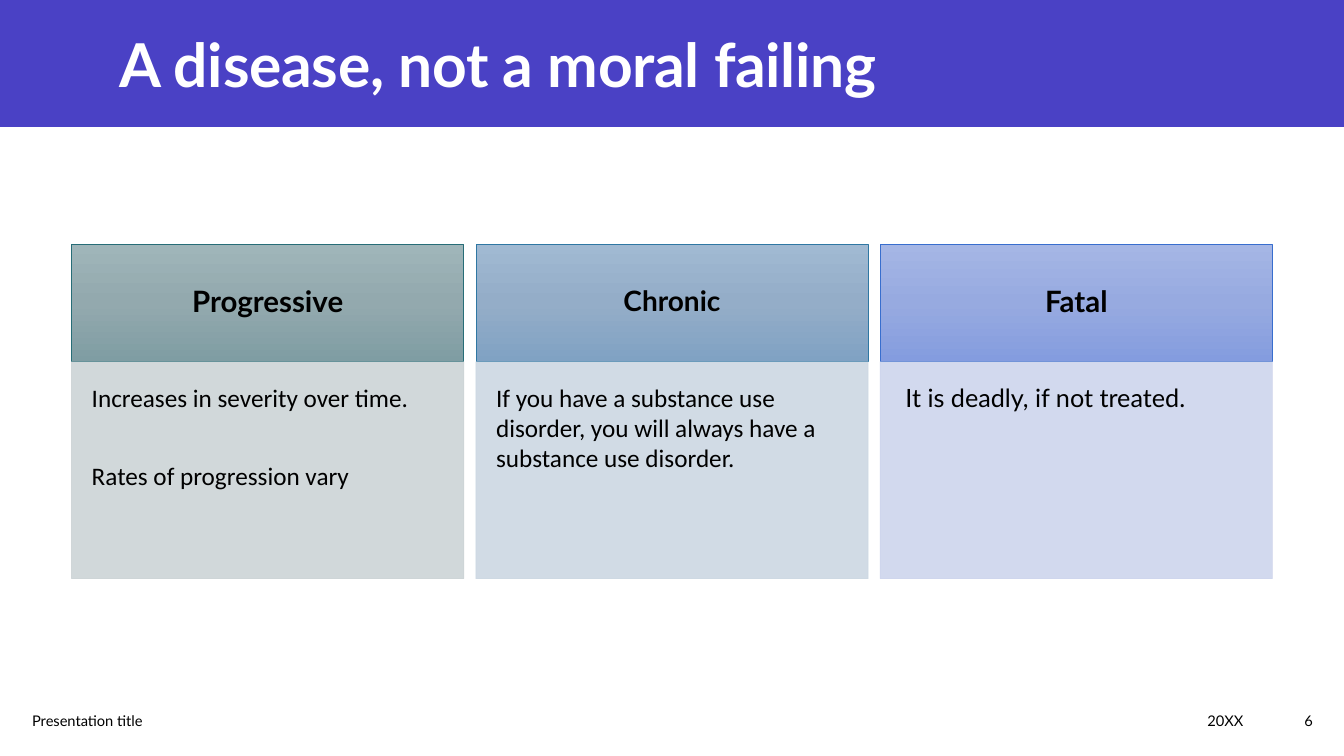
import pptx
import pptx.util
import pptx.dml.color
import pptx.enum.shapes
import pptx.enum.text
import pptx.oxml.ns
from lxml import etree

Inches, Pt = pptx.util.Inches, pptx.util.Pt
RGB = pptx.dml.color.RGBColor.from_string
ALIGN = pptx.enum.text.PP_ALIGN
ANCHOR = pptx.enum.text.MSO_ANCHOR
RECT = pptx.enum.shapes.MSO_SHAPE.RECTANGLE
qn = pptx.oxml.ns.qn

# Content
TITLE = "A disease, not a moral failing"
CARDS = [
    dict(head="Progressive", head_size=21, font="Calibri", indent=0,
         body=["Increases in severity over time.", "Rates of progression vary"],
         grad=["9FB5B9", "93A9AE", "7F9DA3"], line="276D77", fill="CDD4D6"),
    dict(head="Chronic", head_size=20, font="Calibri", indent=0,
         body=["If you have a substance use disorder, you will always have a "
               "substance use disorder."],
         grad=["A0B9D2", "94ADC8", "80A2C3"], line="2F77A3", fill="CDD8E3"),
    dict(head="Fatal", head_size=21, font="Lato", indent=0.05,
         body=["It is deadly, if not treated."],
         grad=["A5B6E5", "97AAE0", "849CDF"], line="386ECE", fill="CED5ED"),
]
FOOTER = [  # text, left, width, alignment
    ("Presentation title", 0.22, 5.29, ALIGN.LEFT),
    ("20XX", 7.67, 4.76, ALIGN.RIGHT),
    ("6", 12.43, 0.69, ALIGN.RIGHT),
]
COLORS = {"band": "4A41C5", "title": "FFFFFF", "text": "000000"}

# Grid, in inches
SLIDE_W, SLIDE_H = 13.33, 7.5
BAND_H = 1.26
CARD_W, GAP = 3.89, 0.12
CARD_TOP, HEAD_H, BODY_H = 2.42, 1.17, 2.15
FOOTER_TOP, FOOTER_H = 6.95, 0.4
LEFT = (SLIDE_W - len(CARDS) * CARD_W - (len(CARDS) - 1) * GAP) / 2

prs = pptx.Presentation()
prs.slide_width, prs.slide_height = Inches(SLIDE_W), Inches(SLIDE_H)
slide = prs.slides.add_slide(prs.slide_layouts[6])


def add_rect(*box):
    sp = slide.shapes.add_shape(RECT, *map(Inches, box))
    sp.shadow.inherit = False
    return sp


def add_box(*box):
    return slide.shapes.add_textbox(*map(Inches, box))


def write(sp, *lines, size, font="Lato", color="text", bold=False, align=ALIGN.LEFT,
          anchor=ANCHOR.MIDDLE, inset=None, indent=0, spacing=None, after=0, track=None):
    tf = sp.text_frame
    tf.word_wrap, tf.vertical_anchor = True, anchor
    if inset is not None:
        tf.margin_top = tf.margin_bottom = tf.margin_right = Inches(inset)
        tf.margin_left = Inches(inset + indent)
    for i, line in enumerate(lines):
        p = tf.add_paragraph() if i else tf.paragraphs[0]
        p.alignment, p.line_spacing, p.space_after = align, spacing, Pt(after)
        r = p.add_run()
        r.text = line
        r.font.size, r.font.name, r.font.bold = Pt(size), font, bold
        r.font.color.rgb = RGB(COLORS[color])
        if track:
            r.font._element.set("spc", str(round(track * 100)))


def fill_gradient(sp, stops):
    sp.fill.gradient()
    sp.fill.gradient_angle = 270
    gs_list = sp._element.spPr.find(".//" + qn("a:gsLst"))
    for gs in list(gs_list):
        gs_list.remove(gs)
    for i, color in enumerate(stops):
        pos = 100000 * i // (len(stops) - 1)
        gs = etree.SubElement(gs_list, qn("a:gs"), pos=str(pos))
        etree.SubElement(gs, qn("a:srgbClr"), val=color)


def fill_translucent(sp, color, percent):
    sp.fill.solid()
    sp.fill.fore_color.rgb = RGB(color)
    sp.line.color.rgb = RGB(color)
    sp.line.width = Pt(0.5)
    for clr in sp._element.spPr.iter(qn("a:srgbClr")):
        etree.SubElement(clr, qn("a:alpha"), val=str(percent * 1000))


# Title band
band = add_rect(0, 0, SLIDE_W, BAND_H)
band.fill.solid()
band.fill.fore_color.rgb = RGB(COLORS["band"])
band.line.fill.background()
write(add_box(1.09, 0.21, 10.96, 0.83), TITLE, size=43.2, color="title",
      bold=True, track=-0.2)

# Cards: header above body
for col, card in enumerate(CARDS):
    x = LEFT + col * (CARD_W + GAP)
    head = add_rect(x, CARD_TOP, CARD_W, HEAD_H)
    fill_gradient(head, card["grad"])
    head.line.color.rgb = RGB(card["line"])
    head.line.width = Pt(0.5)
    write(head, card["head"], size=card["head_size"], bold=True,
          align=ALIGN.CENTER, inset=0.31, spacing=0.9)

    body = add_rect(x, CARD_TOP + HEAD_H, CARD_W, BODY_H)
    fill_translucent(body, card["fill"], 90)
    write(body, *card["body"], size=18, font=card["font"], anchor=ANCHOR.TOP,
          inset=0.2, indent=card["indent"], after=34)

# Footer
for text, x, width, align in FOOTER:
    write(add_box(x, FOOTER_TOP, width, FOOTER_H), text, size=10.5, align=align)

prs.save("out.pptx")
